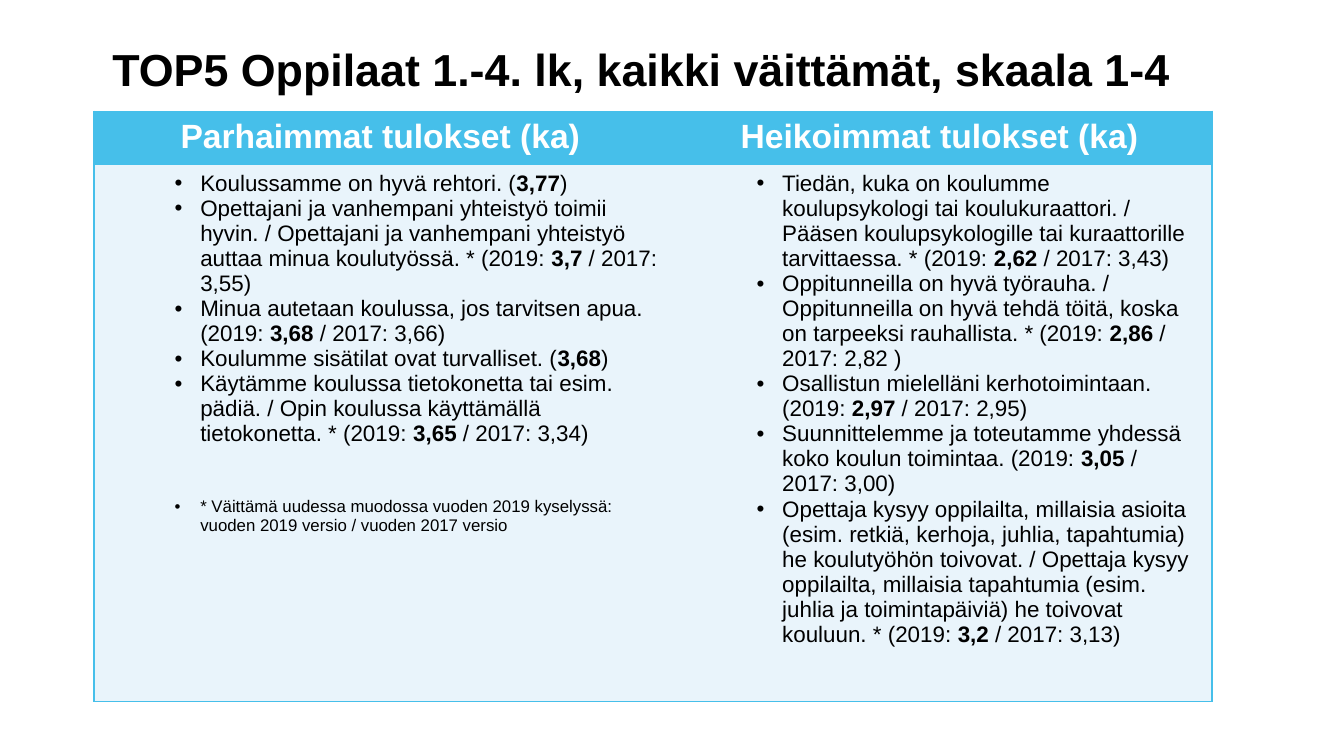
from dataclasses import dataclass

from lxml import etree
from pptx import Presentation
from pptx import util as u
from pptx.dml.color import RGBColor
from pptx.enum import text
from pptx.oxml import ns

FONT = "Arial"
BLUE, PALE, WHITE, BLACK = "46BFEA", "E9F4FB", "FFFFFF", "000000"
SLIDE_WIDTH = 10
SLIDE_HEIGHT = SLIDE_WIDTH * 9 / 16


@dataclass
class Item:
    """One bulleted statement; parts between bars are bold."""
    wording: str
    size: float = 12
    gap_before: float = 0


@dataclass
class Column:
    heading: str
    width: float
    borders: str
    items: list[Item]


COLUMNS = [
    Column("Parhaimmat tulokset (ka) ", 4.33, "LTB", [
        Item("Koulussamme on hyvä rehtori. (|3,77|)"),
        Item("Opettajani ja vanhempani yhteistyö toimii hyvin. / Opettajani ja "
             "vanhempani yhteistyö auttaa minua koulutyössä. * (2019: |3,7| / 2017: 3,55)"),
        Item("Minua autetaan koulussa, jos tarvitsen apua. (2019: |3,68 |/ 2017: 3,66)"),
        Item("Koulumme sisätilat ovat turvalliset. (|3,68|)"),
        Item("Käytämme koulussa tietokonetta tai esim. pädiä. / Opin koulussa "
             "käyttämällä tietokonetta. * (2019: |3,65| / 2017: 3,34)"),
        Item("* Väittämä uudessa muodossa vuoden 2019 kyselyssä: "
             "vuoden 2019 versio / vuoden 2017 versio", size=9, gap_before=27),
    ]),
    Column("Heikoimmat tulokset (ka) ", 3.99, "RTB", [
        Item("Tiedän, kuka on koulumme koulupsykologi tai koulukuraattori. / Pääsen "
             "koulupsykologille tai kuraattorille tarvittaessa. * (2019: |2,62| / 2017: 3,43)"),
        Item("Oppitunneilla on hyvä työrauha. / Oppitunneilla on hyvä tehdä töitä, koska "
             "on tarpeeksi rauhallista. * (2019: |2,86| / 2017: 2,82 )"),
        Item("Osallistun mielelläni kerhotoimintaan. (2019: |2,97| / 2017: 2,95)"),
        Item("Suunnittelemme ja toteutamme yhdessä koko koulun toimintaa. "
             "(2019: |3,05| / 2017: 3,00)"),
        Item("Opettaja kysyy oppilailta, millaisia asioita (esim. retkiä, kerhoja, juhlia, "
             "tapahtumia) he koulutyöhön toivovat. / Opettaja kysyy oppilailta, millaisia "
             "tapahtumia (esim. juhlia ja toimintapäiviä) he toivovat kouluun. * "
             "(2019: |3,2| / 2017: 3,13)"),
    ]),
]


def rgb(color: str) -> RGBColor:
    return RGBColor.from_string(color)


def write(paragraph, wording: str, *, size: float, color: str = BLACK,
          bold: bool = False, align=None) -> None:
    """Fill a paragraph; each bar in the wording toggles bold."""
    paragraph.alignment = align
    for number, part in enumerate(wording.split("|")):
        run = paragraph.add_run()
        run.text = part
        run.font.name = FONT
        run.font.size = u.Pt(size)
        run.font.bold = bold != (number % 2 == 1)
        run.font.color.rgb = rgb(color)


def add_bullet(paragraph) -> None:
    props = paragraph._p.get_or_add_pPr()
    props.set("marL", str(u.Inches(0.69)))
    props.set("indent", str(u.Inches(-0.19)))
    etree.SubElement(props, ns.qn("a:buFont"), typeface=FONT)
    etree.SubElement(props, ns.qn("a:buChar"), char="•")


def style_cell(cell, fill: str, borders: str) -> None:
    """Fill the cell and draw the named sides; the other sides get no line."""
    props = cell._tc.get_or_add_tcPr()
    for side in "LRTB":
        line = etree.SubElement(props, ns.qn(f"a:ln{side}"), w=str(u.Pt(1)))
        if side in borders:
            solid = etree.SubElement(line, ns.qn("a:solidFill"))
            etree.SubElement(solid, ns.qn("a:srgbClr"), val=BLUE)
        else:
            etree.SubElement(line, ns.qn("a:noFill"))
    cell.fill.solid()
    cell.fill.fore_color.rgb = rgb(fill)


def add_title(slide, wording: str) -> None:
    title = slide.shapes.title
    title.left, title.top = u.Inches(0), u.Inches(0.05)
    title.width, title.height = u.Inches(9.64), u.Inches(0.66)
    frame = title.text_frame
    frame.auto_size = text.MSO_AUTO_SIZE.NONE
    frame.word_wrap = True
    frame.vertical_anchor = text.MSO_ANCHOR.BOTTOM
    frame.margin_left = frame.margin_top = frame.margin_bottom = 0
    frame.margin_right = u.Inches(0.1)
    heading = frame.paragraphs[0]
    heading.line_spacing = u.Pt(33)
    write(heading, wording, size=24, bold=True, align=text.PP_ALIGN.CENTER)


def add_results(slide, columns: list[Column]) -> None:
    row_heights = [0.39, 4]
    results = slide.shapes.add_table(
        len(row_heights), len(columns), u.Inches(0.7), u.Inches(0.83),
        u.Inches(sum(column.width for column in columns)),
        u.Inches(sum(row_heights))).table
    results.horz_banding = False
    for row, height in zip(results.rows, row_heights):
        row.height = u.Inches(height)
    for index, column in enumerate(columns):
        results.columns[index].width = u.Inches(column.width)
        header, body = results.cell(0, index), results.cell(1, index)
        style_cell(header, BLUE, column.borders)
        write(header.text_frame.paragraphs[0], column.heading, size=18,
              color=WHITE, bold=True, align=text.PP_ALIGN.CENTER)
        style_cell(body, PALE, column.borders)
        frame = body.text_frame
        for number, item in enumerate(column.items):
            paragraph = frame.add_paragraph() if number else frame.paragraphs[0]
            paragraph.level = 1
            paragraph.space_before = u.Pt(item.gap_before)
            add_bullet(paragraph)
            write(paragraph, item.wording, size=item.size)


def main() -> None:
    deck = Presentation()
    deck.slide_width = u.Inches(SLIDE_WIDTH)
    deck.slide_height = u.Inches(SLIDE_HEIGHT)
    slide = deck.slides.add_slide(deck.slide_layouts[5])
    add_title(slide, "TOP5 Oppilaat 1.-4. lk, kaikki väittämät, skaala 1-4")
    add_results(slide, COLUMNS)
    deck.save("out.pptx")


if __name__ == "__main__":
    main()
